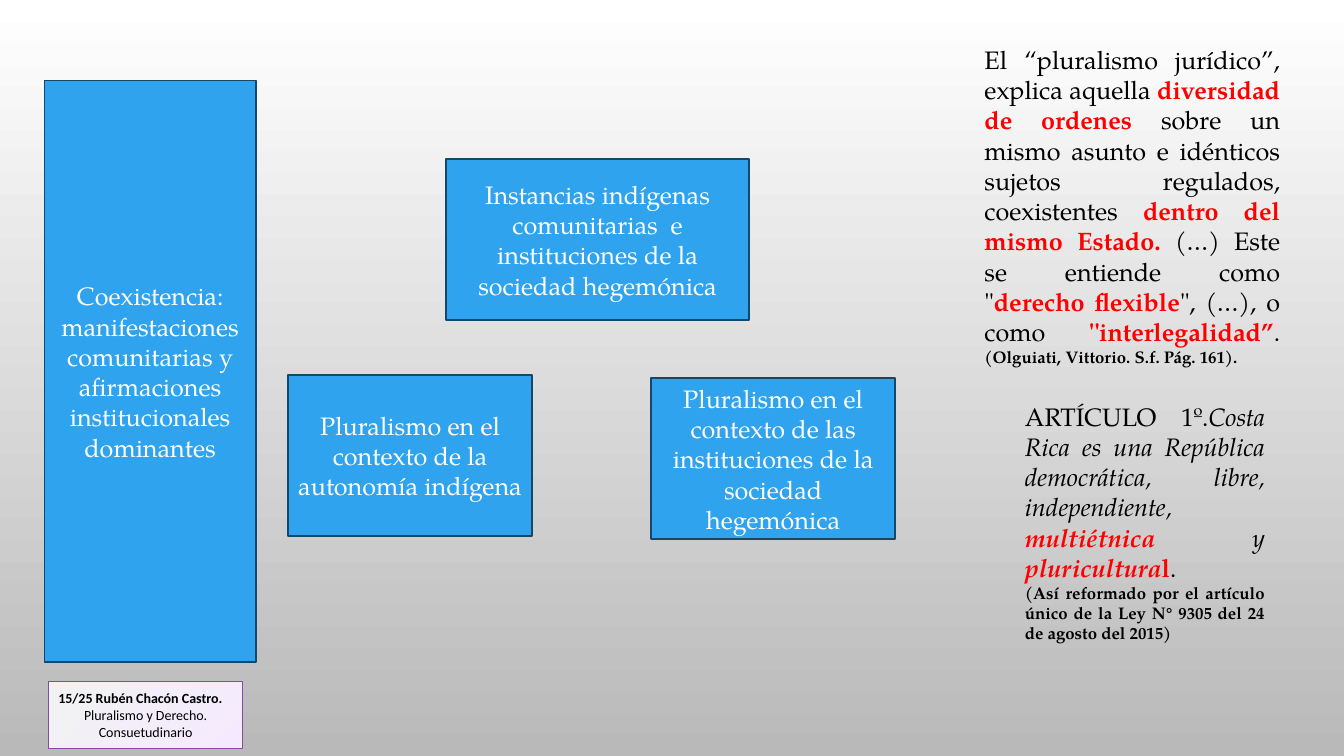
"""Build the slide on legal pluralism: four concept boxes, two quotations and a label."""
from pptx import Presentation
from pptx.dml.color import RGBColor
from pptx.enum import shapes, text
from pptx.util import Cm, Pt

SERIF, SANS = "TeX Gyre Pagella", "Calibri"
BLACK, WHITE, RED = "000000", "FFFFFF", "FF0000"
BLUE, NAVY, PURPLE = "2FA3EE", "154768", "834AA7"
LEFT, CENTER, JUSTIFY = text.PP_ALIGN.LEFT, text.PP_ALIGN.CENTER, text.PP_ALIGN.JUSTIFY

PLAIN = dict(size=18, color=BLACK)
ITALIC = dict(PLAIN, italic=True)
STRONG = dict(size=18, color=RED, bold=True)
STRONG_ITALIC = dict(STRONG, italic=True)
SOURCE = dict(size=12, color=BLACK, bold=True)
BOX = dict(size=18, color=WHITE)
LABEL = dict(size=10, color=BLACK, font=SANS)

CONCEPTS = [
    ((11.25, 4.01, 7.62, 4.06),
     "Instancias indígenas comunitarias  e instituciones de la sociedad hegemónica"),
    ((1.12, 2.03, 5.33, 14.66),
     "Coexistencia: manifestaciones comunitarias y afirmaciones institucionales dominantes"),
    ((7.26, 9.45, 6.15, 4.06),
     "Pluralismo en el contexto de la autonomía indígena"),
    ((16.41, 9.53, 6.15, 4.06),
     "Pluralismo en el contexto de las instituciones de la sociedad hegemónica"),
]

QUOTES = [
    ((24.56, 0.99, 7.95, 8.46), [
        (JUSTIFY, [
            ("El “pluralismo jurídico”, explica aquella ", PLAIN),
            ("diversidad de ordenes", STRONG),
            (" sobre un mismo asunto e idénticos sujetos regulados, coexistentes ", PLAIN),
            ("dentro del mismo Estado. ", STRONG),
            ("(…) Este se entiende como \"", PLAIN),
            ("derecho flexible", STRONG),
            ("\", (…), o como ", PLAIN),
            ("\"interlegalidad”", STRONG),
            (". ", PLAIN),
            ("(Olguiati, Vittorio. S.f. Pág. 161).", SOURCE),
        ]),
    ]),
    ((25.58, 9.98, 6.55, 6.4), [
        (JUSTIFY, [
            ("ARTÍCULO 1º.", PLAIN),
            ("Costa Rica es una República democrática, libre, independiente, ", ITALIC),
            ("multiétnica", STRONG_ITALIC),
            (" y ", ITALIC),
            ("pluricultura", STRONG_ITALIC),
            ("l", STRONG),
            (".", PLAIN),
        ]),
        (JUSTIFY, [
            ("(Así reformado por el artículo único de la Ley N° 9305 "
             "del 24 de agosto del 2015)", SOURCE),
        ]),
    ]),
]

LABEL_AT = (1.22, 17.17, 4.9, 1.7)
LABEL_TEXT = [
    (LEFT, [("15/25 Rubén Chacón Castro.", dict(LABEL, bold=True))]),
    (CENTER, [("Pluralismo y Derecho. Consuetudinario", LABEL)]),
]


def rgb(value):
    return RGBColor.from_string(value)


def set_gradient(fill, first, last, angle):
    fill.gradient()
    fill.gradient_angle = angle
    for stop, color in zip(fill.gradient_stops, (first, last)):
        stop.color.rgb = rgb(color)


def write(tf, paragraphs):
    tf.word_wrap = True
    for i, (align, runs) in enumerate(paragraphs):
        p = tf.add_paragraph() if i else tf.paragraphs[0]
        p.alignment = align
        for content, style in runs:
            r = p.add_run()
            r.text = content
            r.font.name = style.get("font", SERIF)
            r.font.size = Pt(style["size"])
            r.font.bold = style.get("bold", False)
            r.font.italic = style.get("italic", False)
            r.font.color.rgb = rgb(style["color"])


def add_box(s, at, line, width, paragraphs):
    sp = s.shapes.add_shape(shapes.MSO_SHAPE.RECTANGLE, *map(Cm, at))
    sp.shadow.inherit = False
    sp.line.color.rgb = rgb(line)
    sp.line.width = Pt(width)
    sp.text_frame.vertical_anchor = text.MSO_ANCHOR.MIDDLE
    write(sp.text_frame, paragraphs)
    return sp


def main():
    prs = Presentation()
    prs.slide_width, prs.slide_height = Cm(33.87), Cm(19.05)
    s = prs.slides.add_slide(prs.slide_layouts[6])
    set_gradient(s.background.fill, WHITE, "B9B9B9", 270)

    label = add_box(s, LABEL_AT, PURPLE, 0.75, LABEL_TEXT)
    set_gradient(label.fill, "F2F2F2", "F4E9FF", 315)

    for at, content in CONCEPTS:
        sp = add_box(s, at, NAVY, 1.25, [(CENTER, [(content, BOX)])])
        sp.fill.solid()
        sp.fill.fore_color.rgb = rgb(BLUE)

    for at, paragraphs in QUOTES:
        tf = s.shapes.add_textbox(*map(Cm, at)).text_frame
        tf.auto_size = text.MSO_AUTO_SIZE.SHAPE_TO_FIT_TEXT
        write(tf, paragraphs)

    prs.save("out.pptx")


if __name__ == "__main__":
    main()
